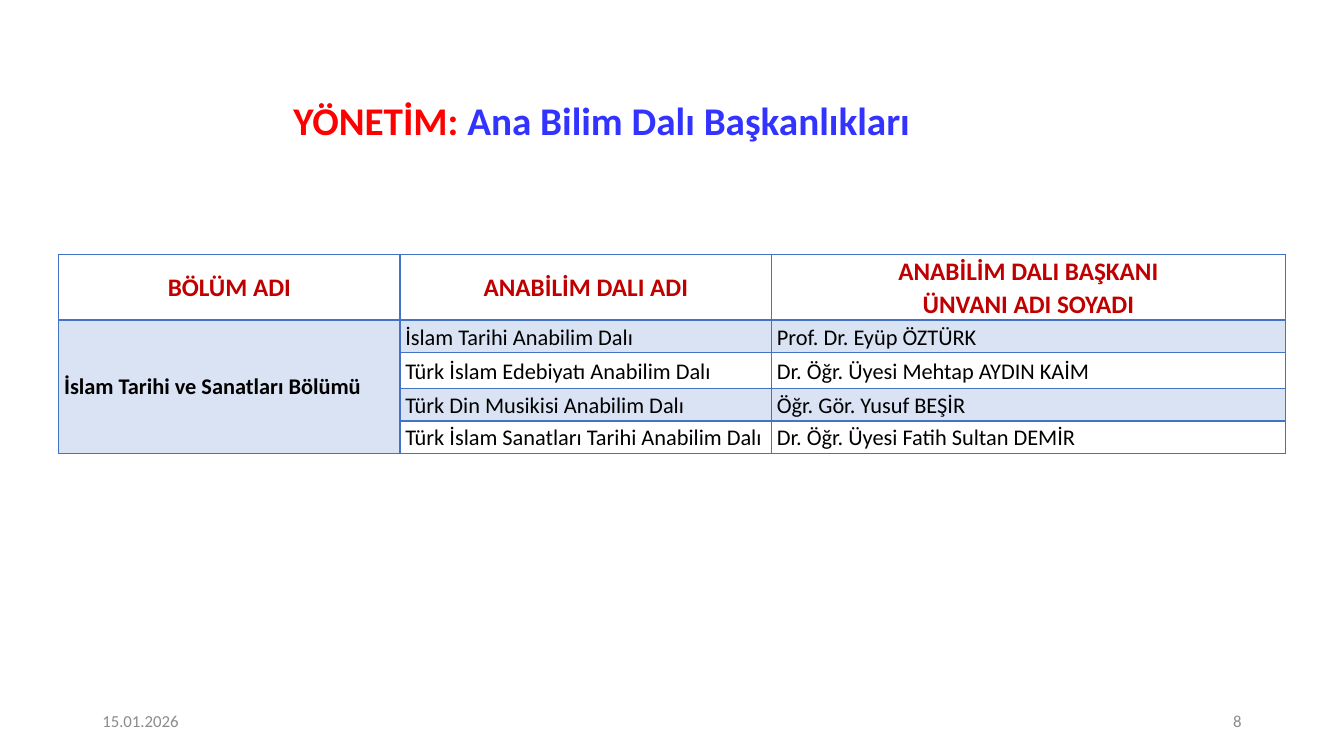
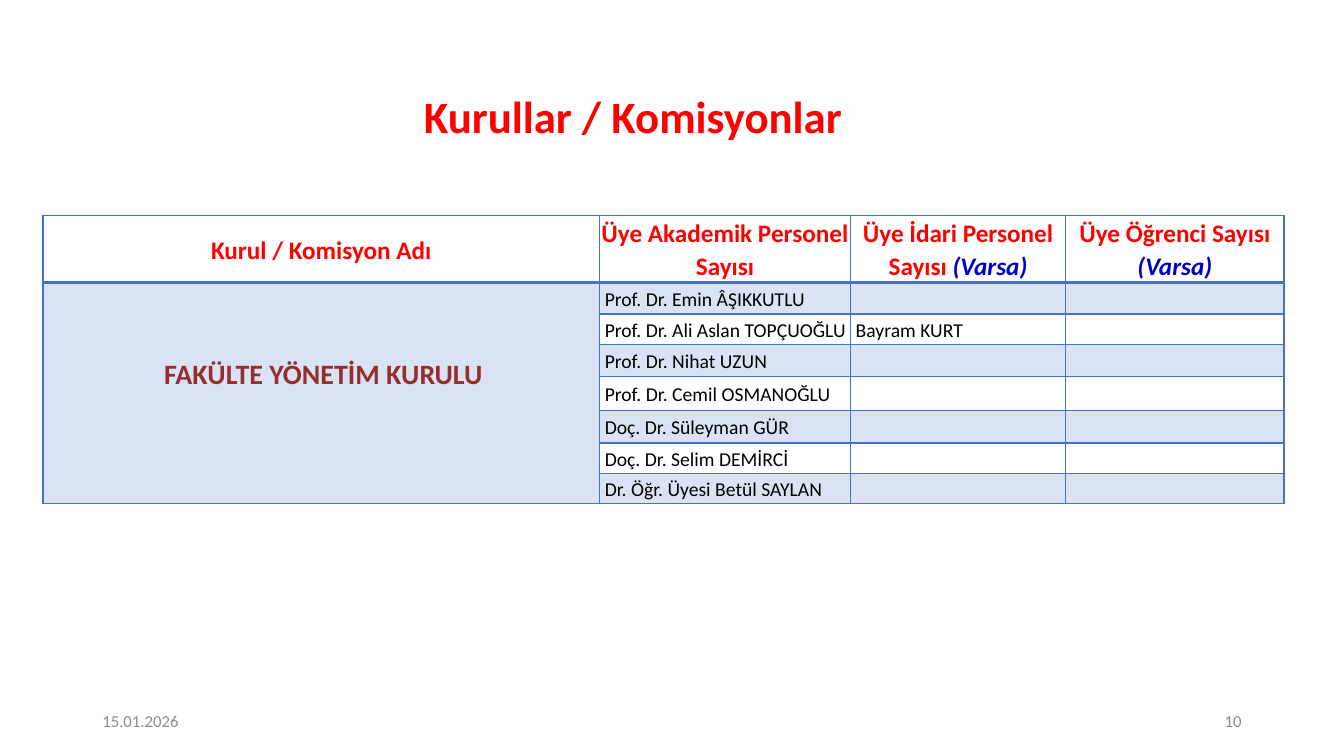
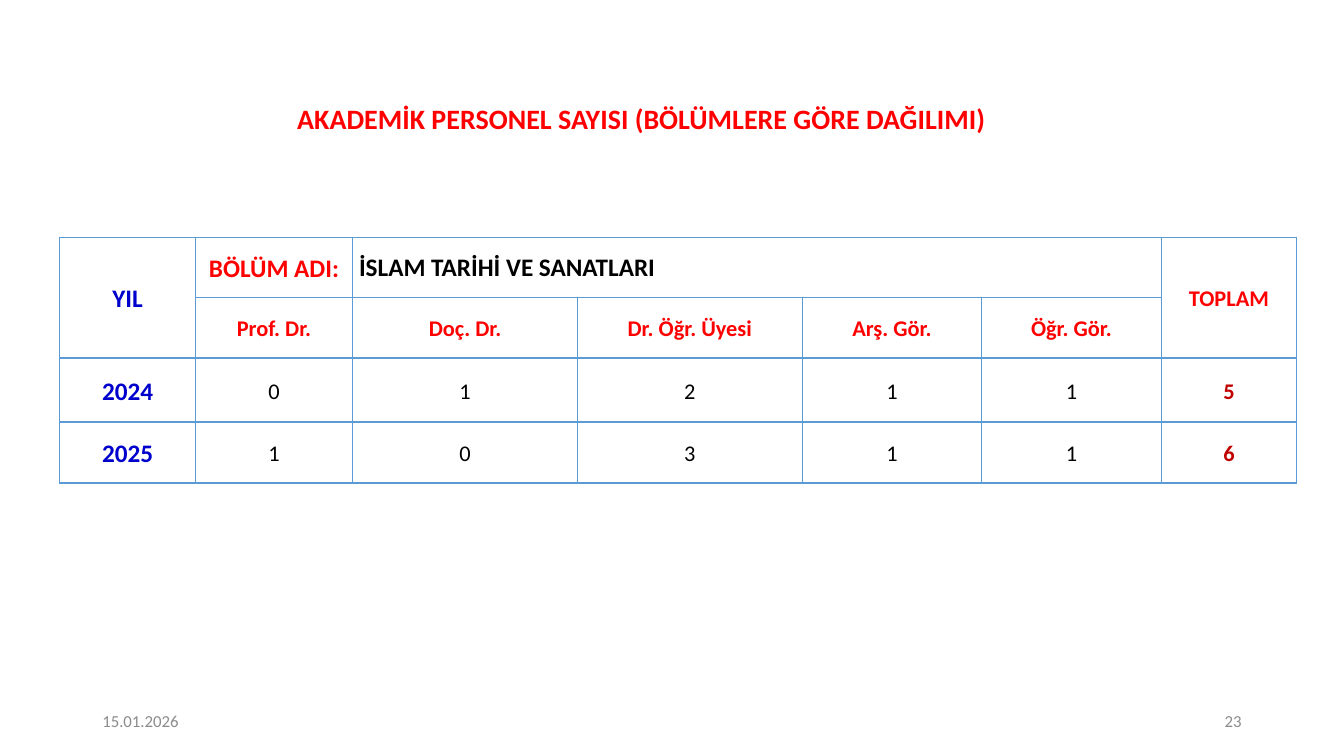
from dataclasses import dataclass, replace

from lxml.etree import SubElement
from pptx import Presentation
from pptx.dml.color import RGBColor
from pptx.enum.text import MSO_ANCHOR, PP_ALIGN
from pptx.oxml.ns import qn
from pptx.util import Pt

PX = 9525
FONT = "Calibri"
COLORS = {
    "red": "FF0000",
    "dark_red": "C00000",
    "brown": "962E2E",
    "blue": "3333FF",
    "navy": "0000CC",
    "black": "000000",
    "gray": "8C8C8C",
    "white": "FFFFFF",
    "band": "DAE3F3",
    "grid": "4472C4",
    "light_grid": "5B9BD5",
}
DATE = "15.01.2026"
FOOTER_TOP, FOOTER_WIDTH, FOOTER_HEIGHT = 667, 288, 38
DATE_LEFT, NUMBER_LEFT = 88, 904


@dataclass(frozen=True)
class Style:
    size: int
    color: str
    bold: bool = False
    italic: bool = False
    align: PP_ALIGN = PP_ALIGN.LEFT
    spacing: float = 1.07


@dataclass(frozen=True)
class Entry:
    """Content of one table cell: runs of (text, style), and its insets."""
    runs: tuple = ()
    insets: tuple = (1, 1, 1, 0)
    fill: str = "white"


FOOTER = Style(12, "gray", spacing=1)
HEADING = Style(18, "red", bold=True, align=PP_ALIGN.CENTER)
OPTIONAL = replace(HEADING, color="navy", italic=True)
SUBHEADING = replace(HEADING, size=16)
COUNT = replace(SUBHEADING, color="black", bold=False)
TOTAL = replace(SUBHEADING, color="dark_red")
YEAR = replace(HEADING, color="navy")
UNIT = Style(16, "black")
MEMBER = Style(14, "black")


def px(value):
    return value * PX


def rgb(name):
    return RGBColor.from_string(COLORS[name])


def format_run(run, style):
    run.font.name = FONT
    run.font.size = Pt(style.size)
    run.font.bold = style.bold
    run.font.italic = style.italic
    run.font.color.rgb = rgb(style.color)


def write(text_frame, runs):
    """Write the first run as text, then append the others to its last line."""
    first_text, first_style = runs[0]
    text_frame.text = first_text
    for paragraph in text_frame.paragraphs:
        paragraph.alignment = first_style.align
        paragraph.line_spacing = first_style.spacing
        format_run(paragraph.runs[0], first_style)
    for text, style in runs[1:]:
        run = paragraph.add_run()
        run.text = text
        format_run(run, style)


def add_text(slide, box, runs):
    text_frame = slide.shapes.add_textbox(*map(px, box)).text_frame
    text_frame.word_wrap = True
    text_frame.vertical_anchor = MSO_ANCHOR.MIDDLE
    write(text_frame, runs)


def add_page(presentation, number, title_box, size, *title):
    """Add a slide with its title, given as (text, color) runs, and footer."""
    slide = presentation.slides.add_slide(presentation.slide_layouts[6])
    style = Style(size, "red", bold=True, align=PP_ALIGN.CENTER, spacing=0.9)
    add_text(slide, title_box,
             [(text, replace(style, color=color)) for text, color in title])
    footers = ((DATE_LEFT, DATE, PP_ALIGN.LEFT),
               (NUMBER_LEFT, str(number), PP_ALIGN.RIGHT))
    for left, text, align in footers:
        add_text(slide, (left, FOOTER_TOP, FOOTER_WIDTH, FOOTER_HEIGHT),
                 [(text, replace(FOOTER, align=align))])
    return slide


def set_borders(cell, color, top, bottom):
    properties = cell._tc.get_or_add_tcPr()
    for tag, width in (("lnL", 1), ("lnR", 1), ("lnT", top), ("lnB", bottom)):
        line = SubElement(properties, qn(f"a:{tag}"), w=str(Pt(width)))
        fill = SubElement(line, qn("a:solidFill"))
        SubElement(fill, qn("a:srgbClr"), val=COLORS[color])


def fill_cell(cell, entry):
    cell.fill.solid()
    cell.fill.fore_color.rgb = rgb(entry.fill)
    cell.vertical_anchor = MSO_ANCHOR.MIDDLE
    (cell.margin_left, cell.margin_top,
     cell.margin_right, cell.margin_bottom) = map(px, entry.insets)
    if entry.runs:
        write(cell.text_frame, entry.runs)
    else:
        paragraph = cell.text_frame.paragraphs[0]
        SubElement(paragraph._p, qn("a:endParaRPr"), sz=str(MEMBER.size * 100))


def add_grid(slide, corner, widths, heights, rows, merges, border, header_rule=1):
    """Add a table; merges are pairs of first and last (row, column)."""
    box = (*corner, sum(widths), sum(heights))
    frame = slide.shapes.add_table(len(heights), len(widths), *map(px, box))
    table = frame.table
    table.first_row = table.horz_banding = False
    for column, width in zip(table.columns, widths):
        column.width = px(width)
    for row, height in zip(table.rows, heights):
        row.height = px(height)
    for first, last in merges:
        table.cell(*first).merge(table.cell(*last))
    for row_index, entries in enumerate(rows):
        top = header_rule if row_index == 1 else 1
        bottom = header_rule if row_index == 0 else 1
        for column_index, entry in enumerate(entries):
            cell = table.cell(row_index, column_index)
            set_borders(cell, border, top, bottom)
            fill_cell(cell, entry)


def band(index):
    return "white" if index % 2 else "band"


def add_department_heads(presentation):
    slide = add_page(presentation, 8, (11, 84, 1124, 65), 28,
                     ("YÖNETİM: ", "red"), ("Ana Bilim Dalı Başkanlıkları", "blue"))
    insets = (5, 0, 5, 0)
    heading = replace(HEADING, color="dark_red")
    headings = ("BÖLÜM ADI", "ANABİLİM DALI ADI",
                "ANABİLİM DALI BAŞKANI\nÜNVANI ADI SOYADI")
    heads = (
        ("İslam Tarihi Anabilim Dalı", "Prof. Dr. Eyüp ÖZTÜRK"),
        ("Türk İslam Edebiyatı Anabilim Dalı", "Dr. Öğr. Üyesi Mehtap AYDIN KAİM"),
        ("Türk Din Musikisi Anabilim Dalı", "Öğr. Gör. Yusuf BEŞİR"),
        ("Türk İslam Sanatları Tarihi Anabilim Dalı",
         "Dr. Öğr. Üyesi Fatih Sultan DEMİR"),
    )
    department = ("İslam Tarihi ve Sanatları Bölümü",
                  replace(UNIT, bold=True, spacing=1))
    rows = [[Entry(((text, heading),), insets) for text in headings]]
    for index, texts in enumerate(heads):
        first = Entry(() if index else (department,), insets, "band")
        rows.append([first] + [Entry(((text, UNIT),), insets, band(index))
                               for text in texts])
    add_grid(slide, (56, 242), (325, 354, 489), (63, 31, 34, 31, 31),
             rows, [((1, 0), (4, 0))], "grid", header_rule=2)


def add_boards(presentation):
    slide = add_page(presentation, 10, (67, 75, 1072, 77), 32,
                     ("Kurullar / Komisyonlar", "red"))
    optional = ("(Varsa)", OPTIONAL)
    headings = (
        (("Kurul / Komisyon Adı", HEADING),),
        (("Üye Akademik Personel Sayısı", HEADING),),
        (("Üye İdari Personel Sayısı ", HEADING), optional),
        (("Üye Öğrenci Sayısı ", HEADING), optional),
    )
    members = (
        ("Prof. Dr. Emin ÂŞIKKUTLU", "", ""),
        ("Prof. Dr. Ali Aslan TOPÇUOĞLU", "Bayram KURT", ""),
        ("Prof. Dr. Nihat UZUN", "", ""),
        ("Prof. Dr. Cemil OSMANOĞLU", "", ""),
        ("Doç. Dr. Süleyman GÜR", "", ""),
        ("Doç. Dr. Selim DEMİRCİ", "", ""),
        ("Dr. Öğr. Üyesi Betül SAYLAN", "", ""),
    )
    board = ("FAKÜLTE YÖNETİM KURULU", replace(HEADING, size=20, color="brown"))
    rows = [[Entry(runs) for runs in headings]]
    for index, texts in enumerate(members):
        first = Entry(() if index else (board,), (5, 1, 1, 38 if index == 0 else 0), "band")
        rows.append([first] + [
            Entry(((text, MEMBER),) if text else (), (5, 1, 1, 0), band(index))
            for text in texts])
    add_grid(slide, (41, 205), (530, 239, 205, 208),
             (64, 30, 29, 31, 32, 31, 29, 29),
             rows, [((1, 0), (7, 0))], "grid", header_rule=2)


def add_staff_counts(presentation):
    slide = add_page(presentation, 23, (68, 67, 1086, 95), 20,
                     ("AKADEMİK PERSONEL SAYISI (BÖLÜMLERE GÖRE DAĞILIMI)", "red"))
    department = replace(HEADING, color="black", align=PP_ALIGN.LEFT, spacing=1)
    ranks = ("Prof. Dr.", "Doç. Dr.", "Dr. Öğr. Üyesi", "Arş. Gör.", "Öğr. Gör.")
    counts = {"2024": (0, 1, 2, 1, 1), "2025": (1, 0, 3, 1, 1)}
    empty = Entry()
    rows = [
        [Entry((("YIL", YEAR),)),
         Entry((("BÖLÜM ADI:", HEADING),)),
         Entry((("İSLAM TARİHİ VE SANATLARI", department),), (6, 1, 1, 0)),
         empty, empty, empty,
         Entry((("TOPLAM", SUBHEADING),))],
        [empty] + [Entry(((rank, SUBHEADING),)) for rank in ranks] + [empty],
    ]
    for year, values in counts.items():
        rows.append([Entry(((year, YEAR),))]
                    + [Entry(((str(value), COUNT),)) for value in values]
                    + [Entry(((str(sum(values)), TOTAL),))])
    merges = [((0, 0), (1, 0)), ((0, 2), (0, 5)), ((0, 6), (1, 6))]
    add_grid(slide, (57, 226), (129, 150, 214, 214, 171, 171, 129),
             (57, 58, 61, 58), rows, merges, "light_grid")


def main():
    presentation = Presentation()
    presentation.slide_width = px(1280)
    presentation.slide_height = px(720)
    add_department_heads(presentation)
    add_boards(presentation)
    add_staff_counts(presentation)
    presentation.save("out.pptx")


if __name__ == "__main__":
    main()
